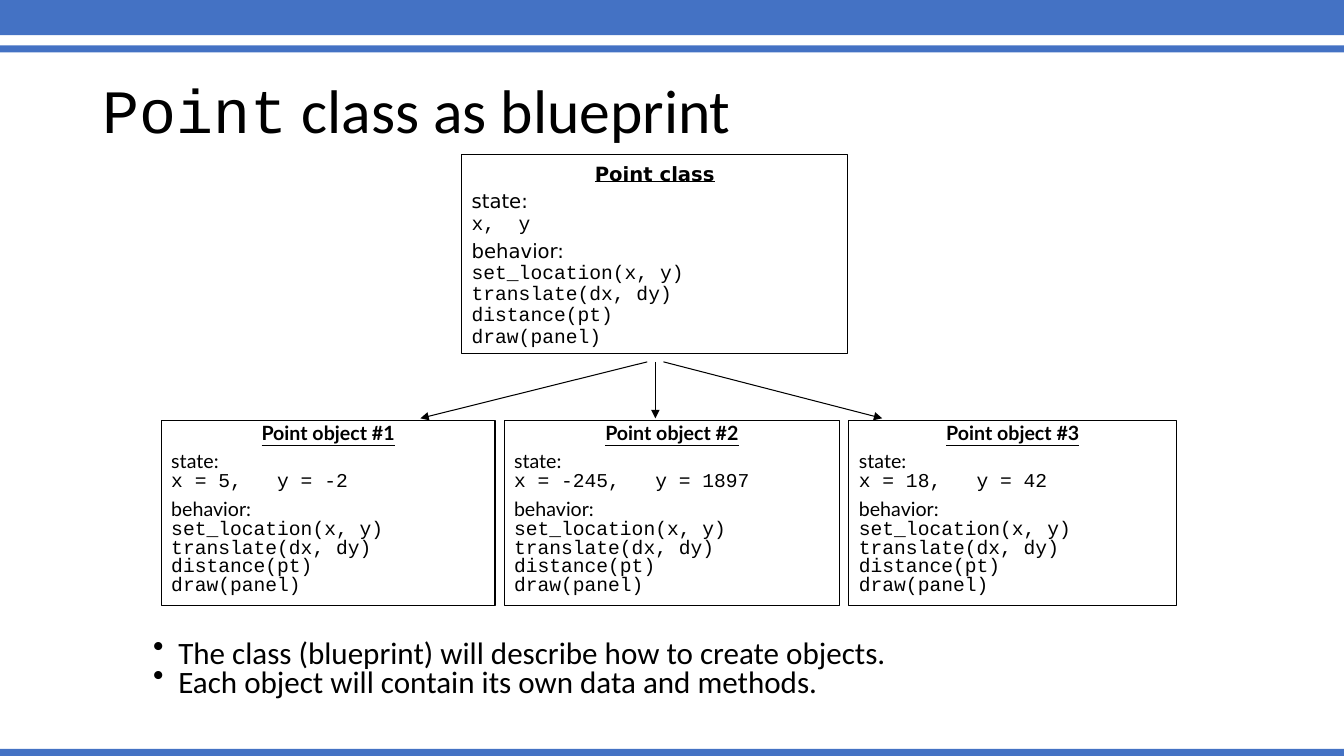
from lxml.etree import SubElement
from pptx import Presentation
from pptx.dml.color import RGBColor
from pptx.enum.shapes import MSO_CONNECTOR, MSO_SHAPE
from pptx.enum.text import MSO_ANCHOR, PP_ALIGN
from pptx.oxml.ns import qn
from pptx.util import Inches, Pt

COLORS = {"band": "4472C4", "ink": "000000", "paper": "FFFFFF"}
CODE = "Courier New"
METHODS = ["set_location(x, y)", "translate(dx, dy)", "distance(pt)", "draw(panel)"]


def color(name):
    return RGBColor.from_string(COLORS[name])


def style(p, font, size, spacing, before=0):
    p.font.name, p.font.size = font, Pt(size)
    p.font.color.rgb = color("ink")
    p.line_spacing, p.space_before = spacing, Pt(before)


def add_rect(s, box, fill, line=None):
    sp = s.shapes.add_shape(MSO_SHAPE.RECTANGLE, *map(Inches, box))
    sp.shadow.inherit = False
    sp.fill.solid()
    sp.fill.fore_color.rgb = color(fill)
    if line:
        sp.line.color.rgb = color(line)
        sp.line.width = Pt(0.75)
    else:
        sp.line.fill.background()
    return sp


def add_text_box(s, box):
    tf = s.shapes.add_textbox(*map(Inches, box)).text_frame
    tf.word_wrap = True
    return tf


def add_bands(s, width):
    for top, height in [(-0.03, 0.38), (0.45, 0.07), (7.43, 0.07)]:
        add_rect(s, (0, top, width, height), "band")


def add_title(s, box):
    tf = add_text_box(s, box)
    tf.vertical_anchor = MSO_ANCHOR.MIDDLE
    p = tf.paragraphs[0]
    style(p, "Calibri", 44, 0.9)
    for text, font in [("Point", CODE), (" class as blueprint", "Calibri")]:
        r = p.add_run()
        r.text, r.font.name = text, font


def add_card(s, box, heading, state, font, heading_spacing, spacing, gap):
    tf = add_rect(s, box, "paper", "ink").text_frame
    tf.word_wrap = True
    tf.vertical_anchor = MSO_ANCHOR.TOP
    p = tf.paragraphs[0]
    p.text, p.alignment = heading, PP_ALIGN.CENTER
    style(p, font, 14, heading_spacing)
    p.font.bold = p.font.underline = True
    for label, lines in [("state:", [state]), ("behavior:", METHODS)]:
        for text in [label] + lines:
            p = tf.add_paragraph()
            p.text, p.alignment = text, PP_ALIGN.LEFT
            is_label = text == label
            style(p, font if is_label else CODE, 14, spacing, gap if is_label else 0)


def add_arrow(s, start, end):
    ends = map(Inches, start + end)
    arrow = s.shapes.add_connector(MSO_CONNECTOR.STRAIGHT, *ends)
    arrow.line.color.rgb = color("ink")
    arrow.line.width = Pt(0.75)
    SubElement(arrow.line._get_or_add_ln(), qn("a:tailEnd"), type="triangle")
    SubElement(arrow._element.spPr, qn("a:effectLst"))


def add_objects(s, top, height):
    objects = [
        (1.6, 3.31, "x = 5,   y = -2"),
        (5, 3.33, "x = -245,   y = 1897"),
        (8.42, 3.25, "x = 18,   y = 42"),
    ]
    for number, (left, width, state) in enumerate(objects, 1):
        add_card(s, (left, top, width, height), f"Point object #{number}",
                 state, "Lato", 0.8, 0.8, 7)


def add_arrows(s, top, bottom):
    for start, end in [(6.42, 4.17), (6.5, 6.5), (6.58, 8.75)]:
        add_arrow(s, (start, top), (end, bottom))


def add_bullets(s, box, lines):
    tf = add_text_box(s, box)
    tf.margin_top = 0
    for i, text in enumerate(lines):
        p = tf.add_paragraph() if i else tf.paragraphs[0]
        p.text = text
        style(p, "Calibri", 22.2, 0.6, 5 if i else 0)
        pPr = p._p.get_or_add_pPr()
        pPr.set("marL", str(Inches(0.25)))
        pPr.set("indent", str(Inches(-0.25)))
        bullet = pPr.makeelement(qn("a:buChar"), {"char": "•"})
        pPr.find(qn("a:defRPr")).addprevious(bullet)


def main():
    prs = Presentation()
    prs.slide_width, prs.slide_height = Inches(13.33), Inches(7.5)
    s = prs.slides.add_slide(prs.slide_layouts[6])
    add_bands(s, 13.33)
    add_title(s, (0.92, 0.4, 11.5, 1.45))
    add_card(s, (4.58, 1.53, 3.83, 1.98), "Point class", "x,  y",
             "DejaVu Sans", 1.1, 0.9, 5)
    add_arrows(s, 3.59, 4.15)
    add_objects(s, 4.17, 1.84)
    add_bullets(s, (1.42, 6.41, 11, 0.55), [
        "The class (blueprint) will describe how to create objects.",
        "Each object will contain its own data and methods.",
    ])
    prs.save("out.pptx")


if __name__ == "__main__":
    main()
